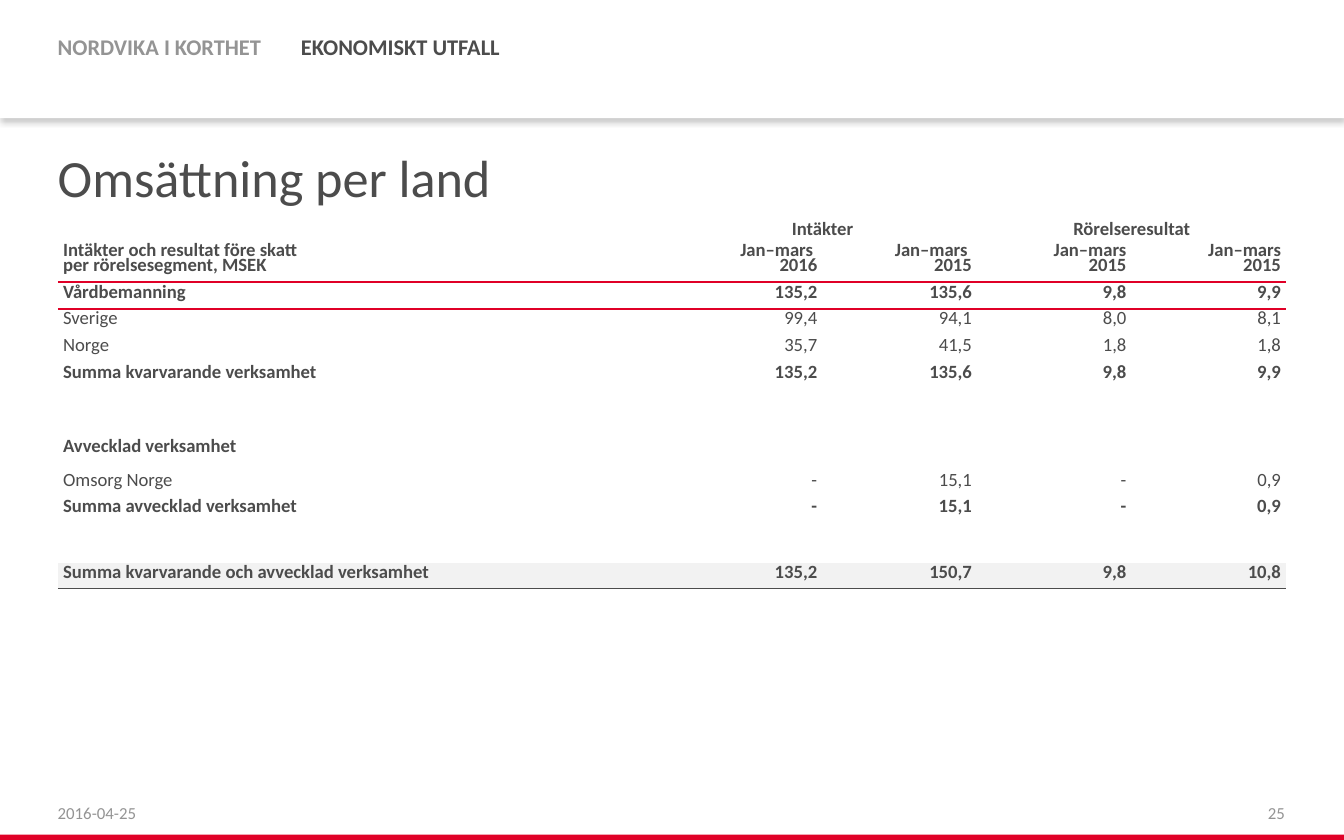
from lxml.etree import SubElement
from pptx import Presentation
from pptx.dml.color import RGBColor
from pptx.enum.shapes import MSO_SHAPE
from pptx.enum.text import MSO_ANCHOR as Anchor, PP_ALIGN as Align
from pptx.oxml import parse_xml
from pptx.oxml.ns import nsdecls, qn
from pptx.util import Inches, Pt

# Content
COLORS = {"white": "FFFFFF", "red": "E00027", "text": "4C4C4C",
          "muted": "949494", "band": "F2F2F2", "black": "000000"}
FONT = "Calibri"
TITLE = "Omsättning per land"
SECTIONS = [("NORDVIKA I KORTHET", 0.35, 1.64, "muted"),
            ("EKONOMISKT UTFALL", 2.16, 1.66, "text")]
FOOTERS = [("2016-04-25", 0.43, Align.LEFT), ("25", 7.23, Align.RIGHT)]
HEADER_ROWS = [
    ["Intäkter och resultat före skatt\vper rörelsesegment, MSEK",
     "Intäkter", "", "Rörelseresultat", ""],
    ["", "Jan–mars \v2016", "Jan–mars \v2015", "Jan–mars\v2015", "Jan–mars\v2015"],
]
BODY_ROWS = [
    ["Vårdbemanning", "135,2", "135,6", "9,8", "9,9"],
    ["Sverige", "99,4", "94,1", "8,0", "8,1"],
    ["Norge", "35,7", "41,5", "1,8", "1,8"],
    ["Summa kvarvarande verksamhet", "135,2", "135,6", "9,8", "9,9"],
    [""] * 5,
    ["Avvecklad verksamhet", "", "", "", ""],
    ["Omsorg Norge", "-", "15,1", "-", "0,9"],
    ["Summa avvecklad verksamhet", "-", "15,1", "-", "0,9"],
    [""] * 5,
    ["Summa kvarvarande och avvecklad verksamhet", "135,2", "150,7", "9,8", "10,8"],
]
REGULAR_ROWS = {"Sverige", "Norge", "Omsorg Norge"}
COLUMN_WIDTHS = [4.54] + [1.15] * 4
ROW_HEIGHTS = [0.16, 0.27] + [0.2] * 7 + [0.19] * 3


def rgb(name):
    return RGBColor.from_string(COLORS[name])


def write(frame, text, size=10, color="text", bold=False, align=Align.LEFT,
          anchor=Anchor.TOP, margins=(0, 0, 0, 0), spacing=None, wrap=True):
    """Fill a text frame; margins are left, top, right, bottom in inches."""
    frame.word_wrap = wrap
    frame.vertical_anchor = anchor
    (frame.margin_left, frame.margin_top,
     frame.margin_right, frame.margin_bottom) = map(Inches, margins)
    paragraph = frame.paragraphs[0]
    paragraph.text = text
    paragraph.alignment = align
    if spacing:
        paragraph.line_spacing = Pt(spacing)
    for run in paragraph.runs:
        run.font.name = FONT
        run.font.size = Pt(size)
        run.font.bold = bold
        run.font.color.rgb = rgb(color)


def add_bar(slide, left, top, width, height, color):
    shape = slide.shapes.add_shape(MSO_SHAPE.RECTANGLE, *map(Inches, (left, top, width, height)))
    shape.shadow.inherit = False
    shape.fill.solid()
    shape.fill.fore_color.rgb = rgb(color)
    shape.line.fill.background()
    return shape


def add_text(slide, left, top, width, height, text, **style):
    box = slide.shapes.add_textbox(*map(Inches, (left, top, width, height)))
    write(box.text_frame, text, **style)


def add_drop_shadow(shape):
    effects = shape._element.spPr.find(qn("a:effectLst"))
    shadow = SubElement(effects, qn("a:outerShdw"), blurRad=str(Pt(3)),
                        dist=str(Pt(2)), dir="5400000", rotWithShape="0")
    color = SubElement(shadow, qn("a:srgbClr"), val=COLORS["black"])
    SubElement(color, qn("a:alpha"), val="20000")


def set_border(cell, side, color, width):
    cell._tc.get_or_add_tcPr().insert(0, parse_xml(
        f'<a:ln{side} {nsdecls("a")} w="{Pt(width)}"><a:solidFill>'
        f'<a:srgbClr val="{COLORS[color]}"/></a:solidFill></a:ln{side}>'))


def add_results_table(slide):
    rows = HEADER_ROWS + BODY_ROWS
    header_count, last = len(HEADER_ROWS), len(rows) - 1
    table = slide.shapes.add_table(
        len(rows), len(COLUMN_WIDTHS), Inches(0.43), Inches(1.67),
        Inches(sum(COLUMN_WIDTHS)), Inches(sum(ROW_HEIGHTS))).table
    table.first_row = table.horz_banding = False
    # Style without grid or banding
    table._tbl.tblPr.find(qn("a:tableStyleId")).text = "{2D5ABB26-0587-4C30-8999-92F81FD0307C}"
    for column, width in zip(table.columns, COLUMN_WIDTHS):
        column.width = Inches(width)
    for row, height in zip(table.rows, ROW_HEIGHTS):
        row.height = Inches(height)

    for r, values in enumerate(rows):
        is_header = r < header_count
        for c, value in enumerate(values):
            cell = table.cell(r, c)
            align = Align.LEFT if c == 0 else Align.CENTER if r == 0 else Align.RIGHT
            write(cell.text_frame, value, bold=values[0] not in REGULAR_ROWS,
                  align=align, spacing=8)
            cell.vertical_anchor = Anchor.BOTTOM if is_header else Anchor.MIDDLE
            cell.margin_left = cell.margin_right = Inches(0.04)
            cell.margin_top = 0
            cell.margin_bottom = Inches(0.04 if is_header else 0)
            if r == last:
                cell.fill.solid()
                cell.fill.fore_color.rgb = rgb("band")
                set_border(cell, "B", "text", 0.5)
            else:
                cell.fill.background()
            if r == header_count - 1 or (r, c) == (0, 0):
                set_border(cell, "B", "red", 1)
            elif r == header_count:
                set_border(cell, "T", "red", 1)

    # Header spans
    table.cell(0, 0).merge(table.cell(1, 0))
    for first in (1, 3):
        table.cell(0, first).merge(table.cell(0, first + 1))


def main():
    presentation = Presentation()
    presentation.slide_width, presentation.slide_height = Inches(10), Inches(6.25)
    slide = presentation.slides.add_slide(presentation.slide_layouts[6])

    # Top band with section names, and bottom stripe
    add_drop_shadow(add_bar(slide, 0, 0, 10, 0.88, "white"))
    add_bar(slide, 0, 6.21, 10, 0.04, "red")
    for text, left, width, color in SECTIONS:
        tab = add_bar(slide, left, 0.18, width, 0.35, "white")
        write(tab.text_frame, text, size=12, color=color, bold=True,
              margins=(0.08, 0.07, 0.08, 0.07), wrap=False)

    # Title and footers
    add_text(slide, 0.43, 0.88, 9.14, 0.8, TITLE, size=28, margins=(0, 0.2, 0, 0.12))
    for text, left, align in FOOTERS:
        add_text(slide, left, 5.89, 2.33, 0.31, text, size=9, color="muted", align=align,
                 anchor=Anchor.BOTTOM, margins=(0, 0.08, 0, 0.08))

    add_results_table(slide)
    presentation.save("out.pptx")


if __name__ == "__main__":
    main()
